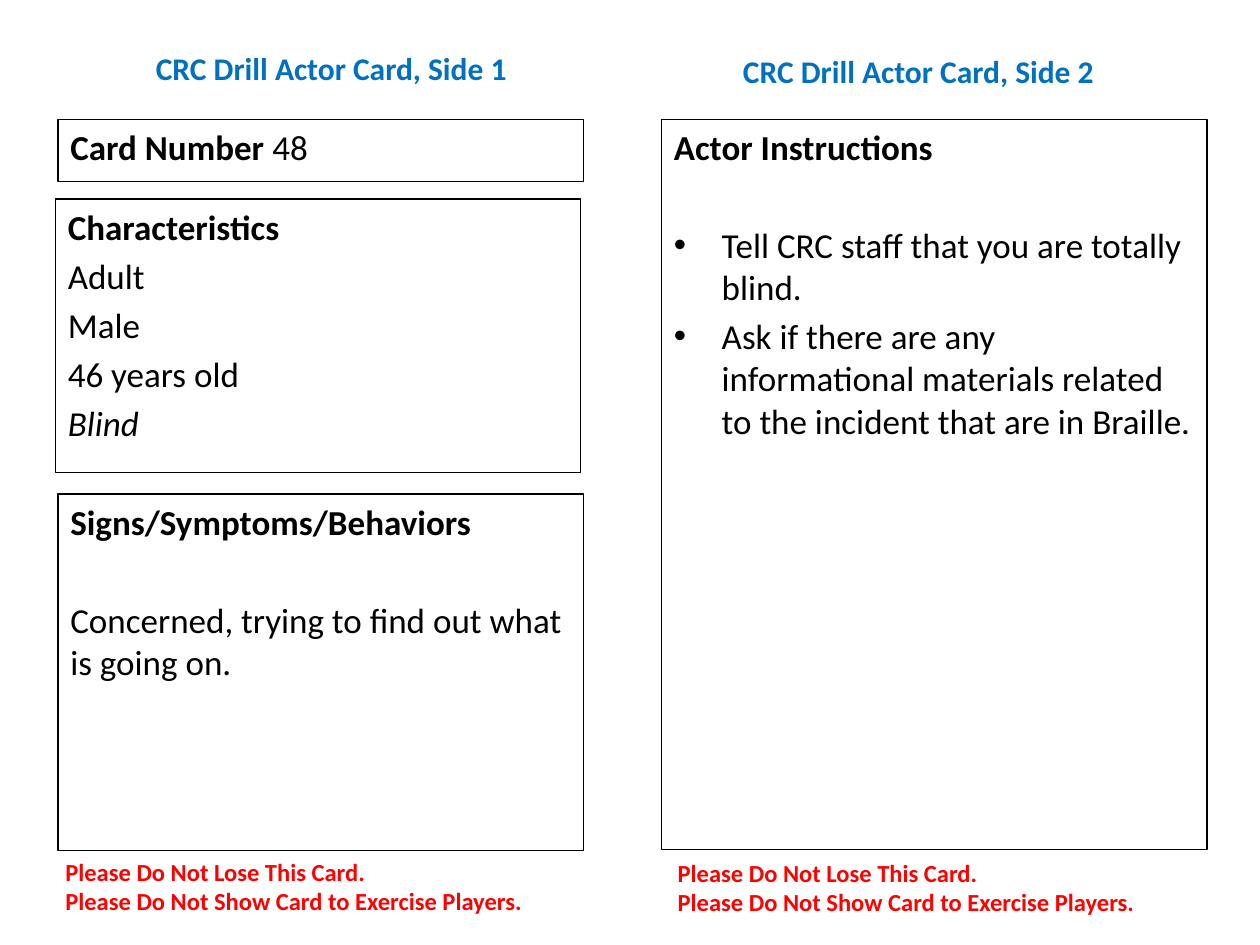
from lxml import etree
from pptx import Presentation
from pptx import util as u
from pptx.dml.color import RGBColor
from pptx.enum import shapes, text
from pptx.oxml.ns import qn

FONT = "Calibri"
BLUE, RED, BLACK = "0070C0", "FF0000", "000000"
WARNING = ["Please Do Not Lose This Card.",
           "Please Do Not Show Card to Exercise Players."]


def color(value):
    return RGBColor.from_string(value)


def format_run(r, size, value, bold=False, italic=False):
    f = r.font
    f.name, f.size, f.bold, f.italic = FONT, u.Pt(size), bold, italic
    f.color.rgb = color(value)


def add_bullet(p):
    pPr = p._p.get_or_add_pPr()
    pPr.set("marL", str(u.Inches(0.38)))
    pPr.set("indent", str(u.Inches(-0.38)))
    etree.SubElement(pPr, qn("a:buFont")).set("typeface", "Arial")
    etree.SubElement(pPr, qn("a:buChar")).set("char", "•")


def add_label(s, box, lines, size, value, centered=False):
    """Borderless bold text, used for side titles and warnings."""
    tf = s.shapes.add_textbox(*map(u.Inches, box)).text_frame
    tf.word_wrap = True
    if centered:
        tf.vertical_anchor = text.MSO_ANCHOR.MIDDLE
    tf.text = "\n".join(lines)
    for p in tf.paragraphs:
        p.alignment = text.PP_ALIGN.CENTER if centered else text.PP_ALIGN.LEFT
        format_run(p.runs[0], size, value, bold=True)


def add_panel(s, box, heading, lines=(), gap=4, bullets=False, italic=()):
    """Outlined box with a bold heading; gap is the space below it in points."""
    sp = s.shapes.add_shape(shapes.MSO_SHAPE.RECTANGLE, *map(u.Inches, box))
    sp.shadow.inherit = False
    sp.fill.background()
    sp.line.color.rgb = color(BLACK)
    sp.line.width = u.Pt(0.75)
    tf = sp.text_frame
    tf.word_wrap = True
    tf.vertical_anchor = text.MSO_ANCHOR.TOP
    tf.text = "\n".join([heading, *lines])
    for i, p in enumerate(tf.paragraphs):
        p.alignment = text.PP_ALIGN.LEFT
        p.space_before = u.Pt(gap if i == 1 else 4)
        r = p.runs[0]
        format_run(r, 20, BLACK, bold=i == 0, italic=r.text in italic)
        if bullets and i > 0:
            add_bullet(p)
    return tf


def add_side_1(s, x, y):
    add_label(s, (x, y, 4.42, 0.78), ["CRC Drill Actor Card, Side 1"], 18, BLUE, True)
    card = add_panel(s, (x + 0.04, y + 0.8, 4.17, 0.49), "Card Number ")
    number = card.paragraphs[0].add_run()
    number.text = "48"
    format_run(number, 20, BLACK)
    add_panel(s, (x + 0.02, y + 1.43, 4.17, 2.17), "Characteristics",
              ["Adult", "Male", "46 years old", "Blind"], italic=["Blind"])
    add_panel(s, (x + 0.04, y + 3.77, 4.17, 2.83), "Signs/Symptoms/Behaviors",
              ["Concerned, trying to find out what is going on."], gap=32)
    add_label(s, (x, y + 6.6, 4.21, 0.57), WARNING, 14, RED)


def add_side_2(s, x, y):
    add_label(s, (x, y, 4.42, 0.78), ["CRC Drill Actor Card, Side 2"], 18, BLUE, True)
    add_panel(s, (x + 0.17, y + 0.78, 4.33, 5.79), "Actor Instructions",
              ["Tell CRC staff that you are totally blind.",
               "Ask if there are any informational materials related "
               "to the incident that are in Braille."], gap=32, bullets=True)
    add_label(s, (x + 0.2, y + 6.59, 4.21, 0.57), WARNING, 14, RED)


def main():
    prs = Presentation()
    prs.slide_width, prs.slide_height = u.Inches(10), u.Inches(7.5)
    s = prs.slides.add_slide(prs.slide_layouts[6])
    add_side_1(s, 0.42, 0.15)
    add_side_2(s, 5.08, 0.17)
    prs.save("out.pptx")


if __name__ == "__main__":
    main()
